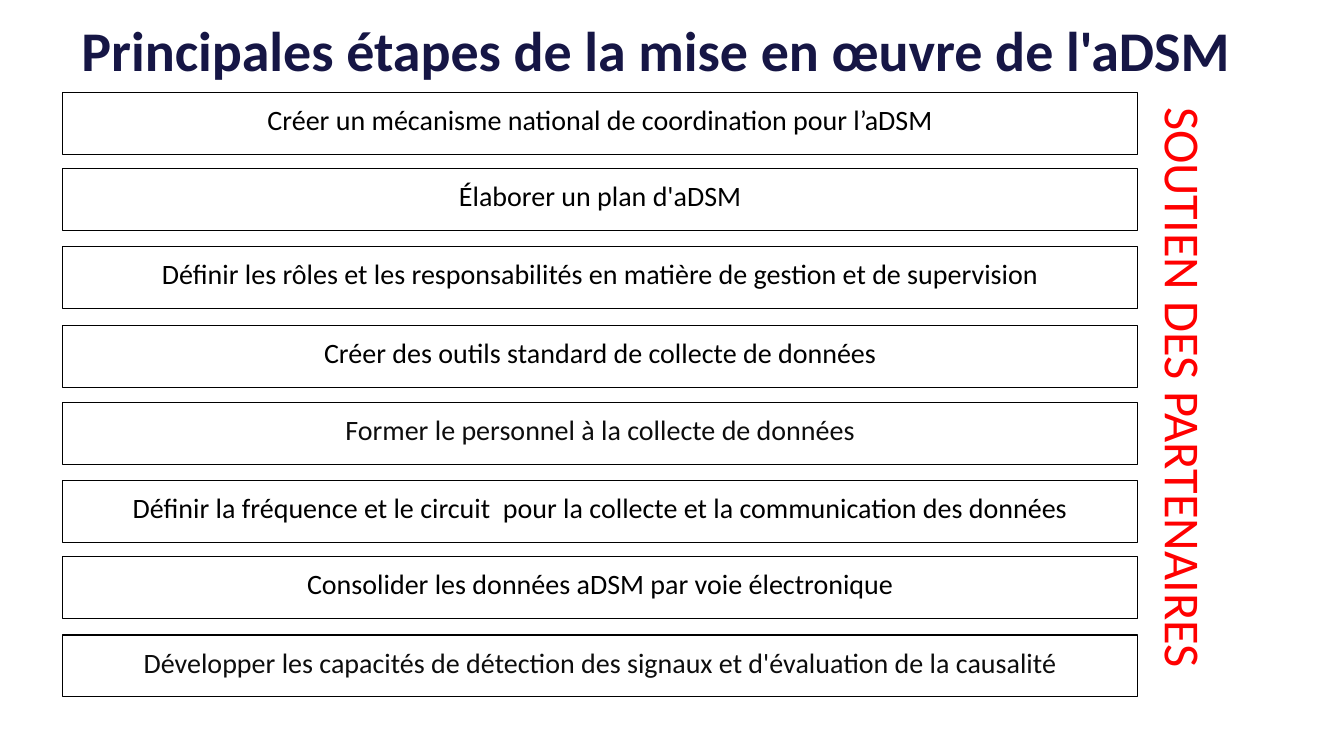
from dataclasses import dataclass

from pptx import Presentation
from pptx.dml.color import RGBColor
from pptx.enum.shapes import MSO_SHAPE as Preset
from pptx.enum.text import MSO_ANCHOR as Anchor, MSO_AUTO_SIZE as AutoSize, PP_ALIGN as Align
from pptx.util import Inches, Pt

COLORS = {
    "title": "161645",
    "black": "000000",
    "soft black": "0D0D0D",
    "white": "FFFFFF",
    "support": "FF0000",
}
FONT = "Calibri"

# Grid of 50 columns and 50 rows
SLIDE_WIDTH, SLIDE_HEIGHT = Inches(13.333), Inches(7.5)
COLUMN, ROW = SLIDE_WIDTH / 50, SLIDE_HEIGHT / 50


@dataclass(frozen=True)
class Area:
    column: float
    row: float
    columns: float
    rows: float

    def box(self) -> tuple[int, int, int, int]:
        return (round(self.column * COLUMN), round(self.row * ROW),
                round(self.columns * COLUMN), round(self.rows * ROW))


@dataclass(frozen=True)
class Step:
    row: float
    text: str
    filled: bool = False


TITLE_AREA = Area(0.19, 0.33, 48.41, 5.8)
SUPPORT_AREA = Area(33.19, 23.27, 21.75, 4.73)
STEP_COLUMN, STEP_COLUMNS, STEP_ROWS = 2.33, 40, 4.1

STEPS = [
    Step(6.13, "Créer un mécanisme national de coordination pour l’aDSM"),
    Step(11.13, "Élaborer un plan d'aDSM"),
    Step(16.33, "Définir les rôles et les responsabilités en matière de gestion et de supervision"),
    Step(21.53, "Créer des outils standard de collecte de données"),
    Step(26.6, "Former le personnel à la collecte de données", filled=True),
    Step(31.8, "Définir la fréquence et le circuit  pour la collecte et la communication des données"),
    Step(36.8, "Consolider les données aDSM par voie électronique"),
    Step(42, "Développer les capacités de détection des signaux et d'évaluation de la causalité",
         filled=True),
]


def color(name: str) -> RGBColor:
    return RGBColor.from_string(COLORS[name])


def write(shape, text: str, size: float, color_name: str,
          anchor: Anchor = Anchor.TOP, bold: bool = False):
    """Set one centred line of text and return its paragraph."""
    frame = shape.text_frame
    frame.text = text
    frame.word_wrap = True
    frame.auto_size = AutoSize.NONE
    frame.vertical_anchor = anchor
    paragraph = frame.paragraphs[0]
    paragraph.alignment = Align.CENTER
    font = paragraph.runs[0].font
    font.name, font.size, font.bold = FONT, Pt(size), bold
    font.color.rgb = color(color_name)
    return paragraph


def add_step(slide, step: Step) -> None:
    area = Area(STEP_COLUMN, step.row, STEP_COLUMNS, STEP_ROWS)
    shape = slide.shapes.add_shape(Preset.RECTANGLE, *area.box())
    shape.shadow.inherit = False
    shape.line.color.rgb = color("black")
    shape.line.width = Pt(0.75)
    if step.filled:
        shape.fill.solid()
        shape.fill.fore_color.rgb = color("white")
    else:
        shape.fill.background()
    paragraph = write(shape, step.text, 20, "soft black" if step.filled else "black")
    paragraph.line_spacing = 1.15
    paragraph.space_after = Pt(10)


def main() -> None:
    presentation = Presentation()
    presentation.slide_width, presentation.slide_height = SLIDE_WIDTH, SLIDE_HEIGHT
    slide = presentation.slides.add_slide(presentation.slide_layouts[5])

    # Title
    title = slide.shapes.title
    title.left, title.top, title.width, title.height = TITLE_AREA.box()
    write(title, "Principales étapes de la mise en œuvre de l'aDSM", 40, "title",
          Anchor.MIDDLE, bold=True)

    # Steps
    for step in STEPS:
        add_step(slide, step)

    # Partner support, read downwards
    support = slide.shapes.add_textbox(*SUPPORT_AREA.box())
    support.rotation = 90
    write(support, "SOUTIEN DES PARTENAIRES", 36, "support")

    presentation.save("out.pptx")


if __name__ == "__main__":
    main()
